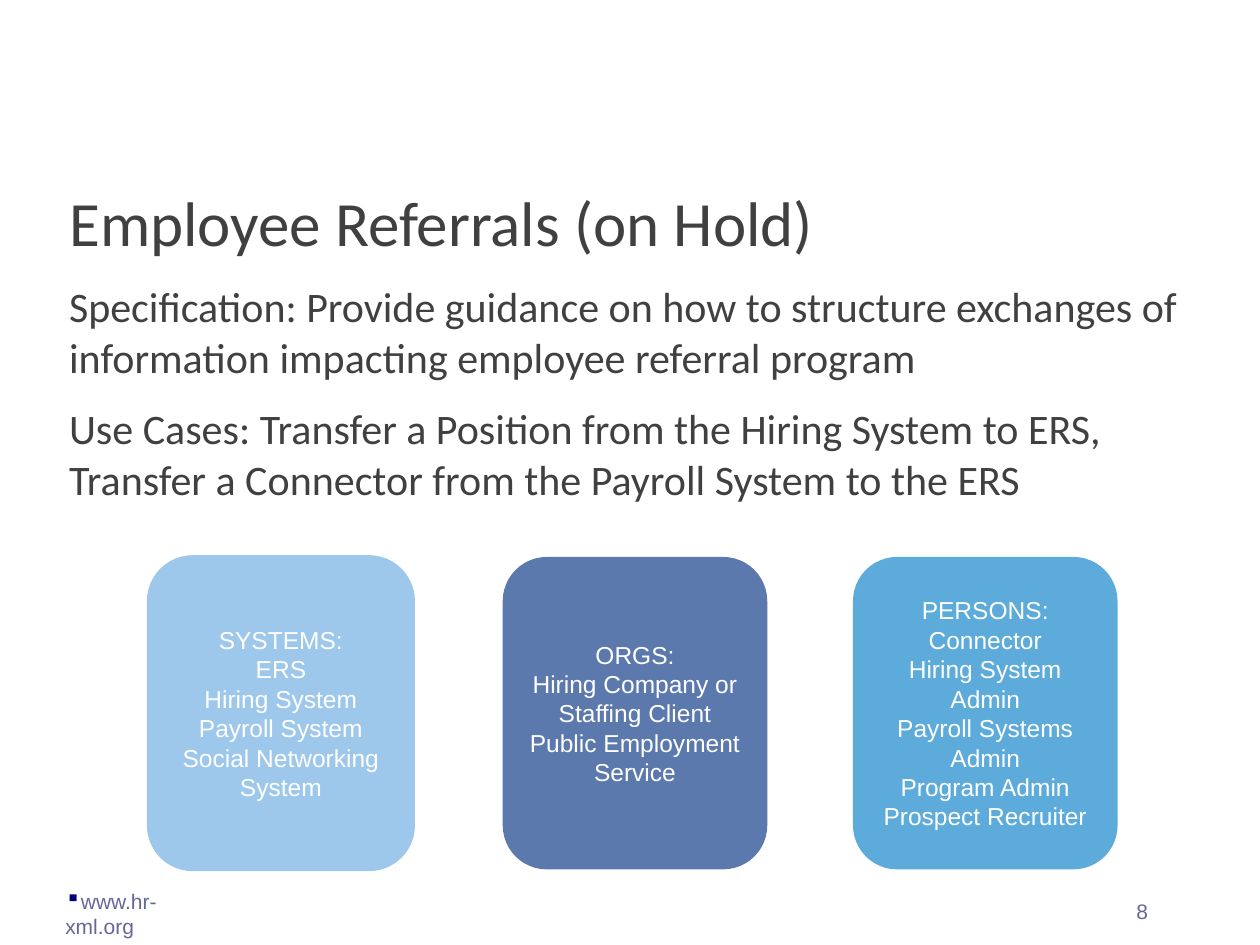
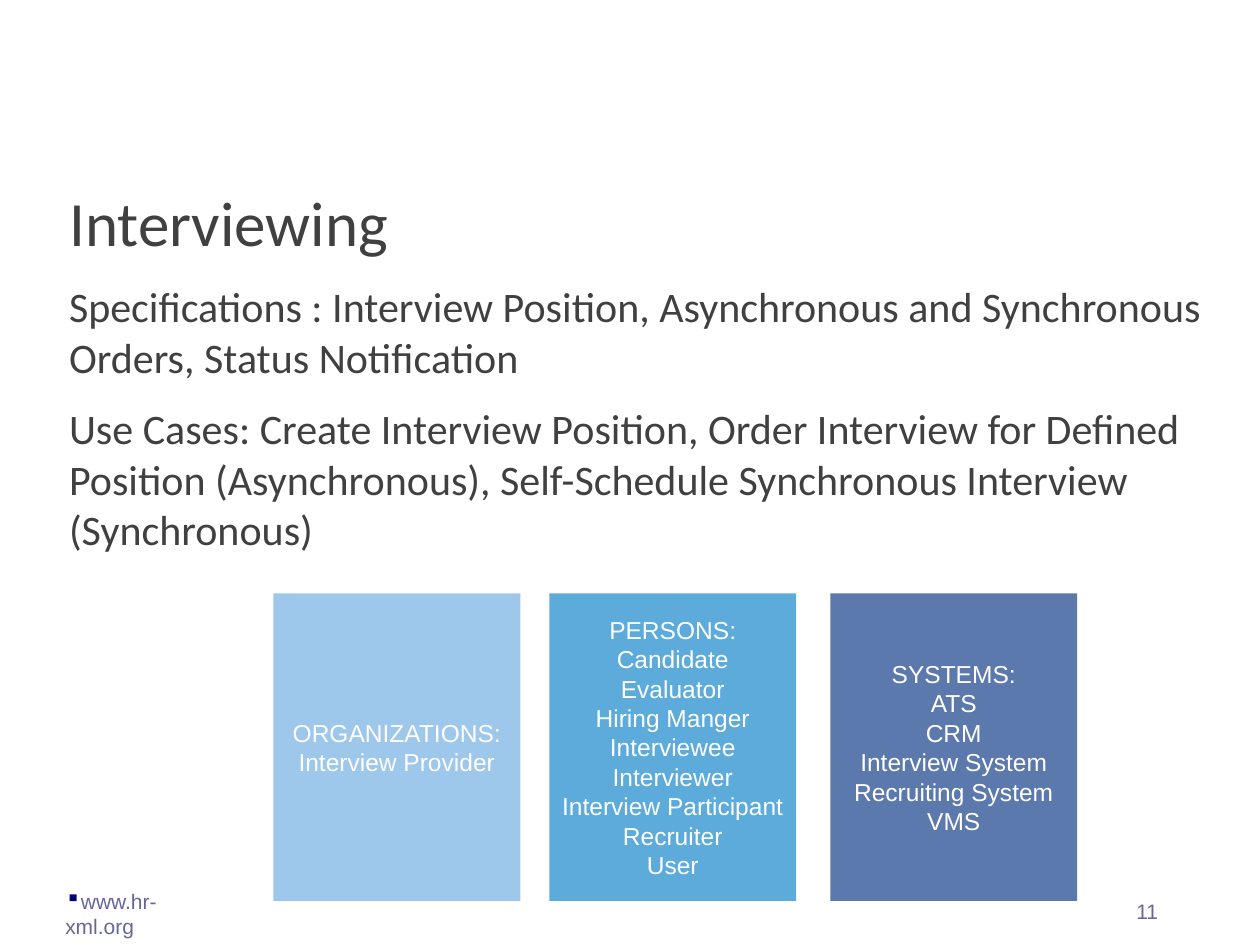
from dataclasses import dataclass

from lxml import etree
from pptx import Presentation
from pptx.dml.color import RGBColor
from pptx.enum.shapes import MSO_SHAPE
from pptx.enum.text import MSO_ANCHOR, MSO_AUTO_SIZE, PP_ALIGN
from pptx.oxml.ns import qn
from pptx.slide import Slide
from pptx.util import Inches, Pt

ROUNDED = MSO_SHAPE.ROUNDED_RECTANGLE
SQUARE = MSO_SHAPE.RECTANGLE
TOP, MIDDLE = MSO_ANCHOR.TOP, MSO_ANCHOR.MIDDLE
LEFT, CENTER = PP_ALIGN.LEFT, PP_ALIGN.CENTER
NO_AUTOFIT = MSO_AUTO_SIZE.NONE

WHITE = RGBColor(0xFF, 0xFF, 0xFF)
CHARCOAL = RGBColor(0x40, 0x40, 0x40)
SLATE = RGBColor(0x66, 0x66, 0x99)
PALE_BLUE = RGBColor(0x9E, 0xC8, 0xEB)
SKY_BLUE = RGBColor(0x5C, 0xAB, 0xDA)
DUSK_BLUE = RGBColor(0x5C, 0x79, 0xAD)
BULLET_NAVY = "00007D"

HEADING_FONT = "Calibri"
LABEL_FONT = "Arial"
TITLE_ONLY = 5
TEXT_LEFT, TEXT_WIDTH = 0.45, 9.23
TITLE_TOP, TITLE_HEIGHT = 1.36, 0.77
BODY_HEIGHT = 4.92


@dataclass(frozen=True)
class TextStyle:
    font: str
    size: int
    color: RGBColor
    align: PP_ALIGN = LEFT
    gap: int = 0


@dataclass(frozen=True)
class Card:
    left: float
    fill: RGBColor
    lines: tuple[str, ...]
    outlined: bool = False


@dataclass(frozen=True)
class CardStyle:
    outline: MSO_SHAPE
    top: float
    width: float
    height: float


@dataclass(frozen=True)
class Topic:
    number: int
    title: str
    body: tuple[str, ...]
    card_style: CardStyle
    cards: tuple[Card, ...]


TITLE_STYLE = TextStyle(HEADING_FONT, 36, CHARCOAL)
BODY_STYLE = TextStyle(HEADING_FONT, 24, CHARCOAL, gap=6)
FOOTER_STYLE = TextStyle(LABEL_FONT, 12, SLATE)
CARD_TEXT = TextStyle(LABEL_FONT, 14, WHITE, CENTER)

TOPICS = (
    Topic(
        8,
        "Employee Referrals (on Hold)",
        (
            "Specification: Provide guidance on how to structure exchanges of "
            "information impacting employee referral program",
            "Use Cases: Transfer a Position from the Hiring System to ERS, "
            "Transfer a Connector from the Payroll System to the ERS",
        ),
        CardStyle(ROUNDED, 4.42, 2.1, 2.48),
        (
            Card(1.18, PALE_BLUE, ("SYSTEMS:", "ERS", "Hiring System", "Payroll System",
                                   "Social Networking System"), outlined=True),
            Card(3.99, DUSK_BLUE, ("ORGS:", "Hiring Company or Staffing Client",
                                   "Public Employment Service")),
            Card(6.77, SKY_BLUE, ("PERSONS:", "Connector", "Hiring System Admin",
                                  "Payroll Systems Admin", "Program Admin",
                                  "Prospect Recruiter")),
        ),
    ),
    Topic(
        11,
        "Interviewing",
        (
            "Specifications : Interview Position, Asynchronous and Synchronous "
            "Orders, Status Notification",
            "Use Cases: Create Interview Position, Order Interview for Defined "
            "Position (Asynchronous), Self-Schedule Synchronous Interview (Synchronous)",
        ),
        CardStyle(SQUARE, 4.71, 1.96, 2.44),
        (
            Card(2.17, PALE_BLUE, ("ORGANIZATIONS:", "Interview Provider")),
            Card(4.36, SKY_BLUE, ("PERSONS:", "Candidate", "Evaluator", "Hiring Manger",
                                  "Interviewee", "Interviewer", "Interview Participant",
                                  "Recruiter", "User")),
            Card(6.59, DUSK_BLUE, ("SYSTEMS:", "ATS", "CRM", "Interview System",
                                   "Recruiting System", "VMS")),
        ),
    ),
)


def write(frame, lines: tuple[str, ...], style: TextStyle, anchor=TOP, inset=0.05) -> None:
    frame.word_wrap = True
    frame.auto_size = NO_AUTOFIT
    frame.vertical_anchor = anchor
    frame.margin_left = frame.margin_right = Inches(0.1)
    frame.margin_top = frame.margin_bottom = Inches(inset)
    for index, line in enumerate(lines):
        paragraph = frame.add_paragraph() if index else frame.paragraphs[0]
        paragraph.alignment = style.align
        paragraph.space_before = Pt(style.gap if index else 0)
        paragraph.space_after = Pt(style.gap)
        run = paragraph.add_run()
        run.text = line
        run.font.name = style.font
        run.font.size = Pt(style.size)
        run.font.color.rgb = style.color


def add_bullet(paragraph) -> None:
    properties = paragraph._p.get_or_add_pPr()
    properties.set("marL", "0")
    properties.set("indent", "0")
    color = etree.SubElement(properties, qn("a:buClr"))
    etree.SubElement(color, qn("a:srgbClr")).set("val", BULLET_NAVY)
    etree.SubElement(properties, qn("a:buChar")).set("char", "▪")


def add_text(slide: Slide, left: float, top: float, width: float, height: float,
             lines: tuple[str, ...], style: TextStyle, inset: float = 0.05):
    box = slide.shapes.add_textbox(Inches(left), Inches(top), Inches(width), Inches(height))
    write(box.text_frame, lines, style, inset=inset)
    return box.text_frame


def add_footer(slide: Slide, number: int) -> None:
    site = add_text(slide, 0.42, 7, 1.43, 0.3, ("www.hr-xml.org",), FOOTER_STYLE)
    add_bullet(site.paragraphs[0])
    add_text(slide, 8.92, 7.08, 0.67, 0.3, (str(number),), FOOTER_STYLE)


def add_heading(slide: Slide, text: str) -> None:
    title = slide.shapes.title
    title.left, title.top = Inches(TEXT_LEFT), Inches(TITLE_TOP)
    title.width, title.height = Inches(TEXT_WIDTH), Inches(TITLE_HEIGHT)
    write(title.text_frame, (text,), TITLE_STYLE, inset=0.1)


def add_card(slide: Slide, card: Card, style: CardStyle) -> None:
    panel = slide.shapes.add_shape(style.outline, Inches(card.left), Inches(style.top),
                                   Inches(style.width), Inches(style.height))
    panel.shadow.inherit = False
    panel.fill.solid()
    panel.fill.fore_color.rgb = card.fill
    if card.outlined:
        panel.line.color.rgb = card.fill
        panel.line.width = Pt(2)
    else:
        panel.line.fill.background()
    write(panel.text_frame, card.lines, CARD_TEXT, anchor=MIDDLE)


def add_topic(presentation, topic: Topic) -> None:
    slide = presentation.slides.add_slide(presentation.slide_layouts[TITLE_ONLY])
    slide.background.fill.solid()
    slide.background.fill.fore_color.rgb = WHITE
    add_footer(slide, topic.number)
    add_heading(slide, topic.title)
    add_text(slide, TEXT_LEFT, TITLE_TOP + TITLE_HEIGHT, TEXT_WIDTH, BODY_HEIGHT,
             topic.body, BODY_STYLE, inset=0.1)
    for card in topic.cards:
        add_card(slide, card, topic.card_style)


def main() -> None:
    presentation = Presentation()
    presentation.slide_width = Inches(10)
    presentation.slide_height = Inches(7.5)
    for topic in TOPICS:
        add_topic(presentation, topic)
    presentation.save("out.pptx")


if __name__ == "__main__":
    main()
